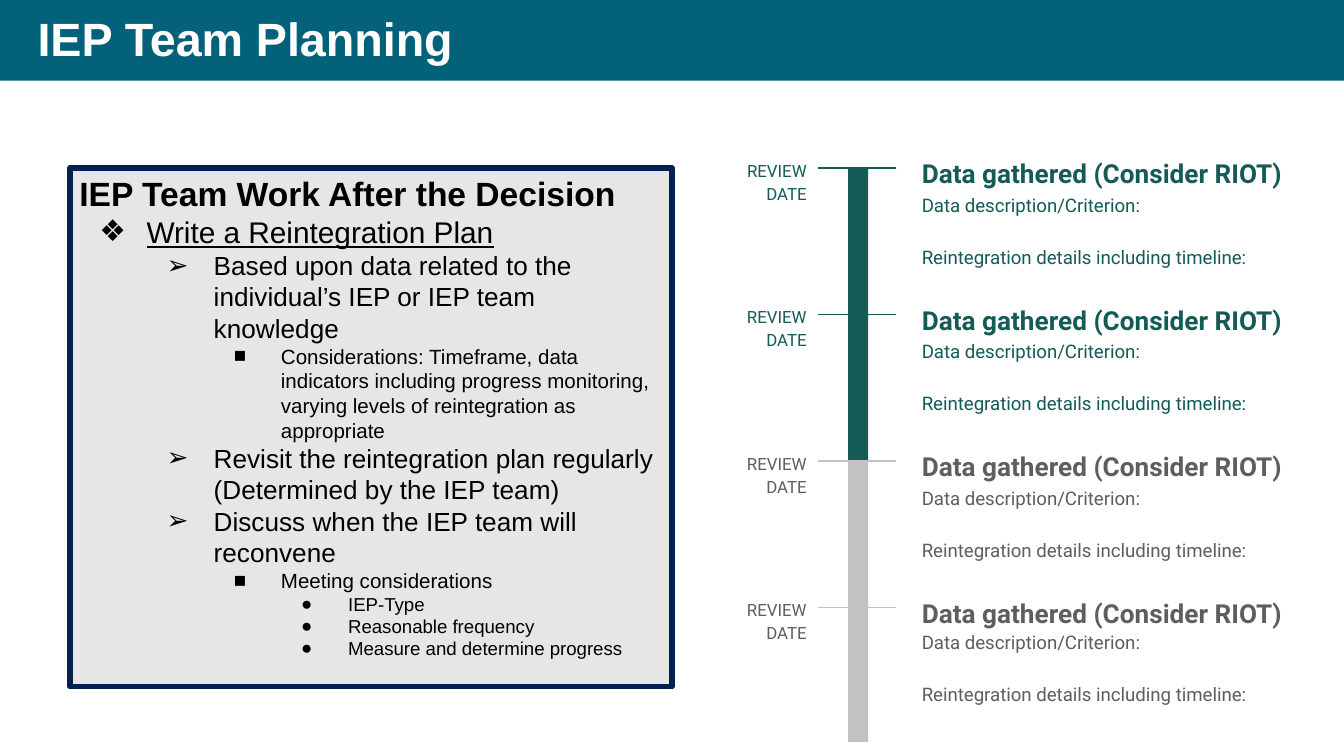
from lxml import etree
from pptx import Presentation
from pptx.dml.color import RGBColor
from pptx.enum import shapes, text
from pptx.oxml import ns
from pptx.util import Inches, Pt

TEAL, GREEN, SILVER, GREY = "03617A", "155B55", "C2C2C2", "5E5E5E"
NAVY, PALE, BLACK, WHITE = "002152", "E6E6E6", "000000", "FFFFFF"

# Bullet and text size for each outline level; level 0 is the heading
LEVELS = [(None, 18), ("❖", 16), ("➢", 14), ("■", 11), ("●", 10)]
OUTLINE = [
    (0, "IEP Team Work After the Decision"),
    (1, "Write a Reintegration Plan"),
    (2, "Based upon data related to the individual’s IEP or IEP team knowledge"),
    (3, "Considerations: Timeframe, data indicators including progress "
        "monitoring, varying levels of reintegration as appropriate"),
    (2, "Revisit the reintegration plan regularly (Determined by the IEP team)"),
    (2, "Discuss when the IEP team will reconvene"),
    (3, "Meeting considerations"),
    (4, "IEP-Type"),
    (4, "Reasonable frequency"),
    (4, "Measure and determine progress"),
]

# Timeline steps: bar colour, text colour, label, bar height, details offset
STEPS = [
    (GREEN, GREEN, ["REVIEW DATE"], 1.09, 0.09),
    (GREEN, GREEN, ["REVIEW", "DATE"], 1.09, 0.09),
    (SILVER, GREY, ["REVIEW", "DATE"], 1.09, 0.09),
    (SILVER, GREY, ["REVIEW", "DATE"], 1, 0.07),
]
TIMELINE_TOP, STEP = 1.25, 1.09


def rgb(value):
    return RGBColor.from_string(value)


def add_rect(parent, left, top, width, height, fill, line=None):
    sp = parent.add_shape(shapes.MSO_SHAPE.RECTANGLE, Inches(left),
                          Inches(top), Inches(width), Inches(height))
    sp.shadow.inherit = False
    sp.fill.solid()
    sp.fill.fore_color.rgb = rgb(fill)
    if line:
        sp.line.color.rgb = rgb(line)
        sp.line.width = Pt(3)
    else:
        sp.line.fill.background()
    return sp


def add_rule(parent, left, right, y, color):
    cx = parent.add_connector(shapes.MSO_CONNECTOR.STRAIGHT, Inches(right),
                              Inches(y), Inches(left), Inches(y))
    cx.line.color.rgb = rgb(color)
    cx.line.width = Pt(0.75)
    etree.SubElement(cx._element.spPr, ns.qn("a:effectLst"))


def set_insets(tf, x, y):
    tf.word_wrap = True
    tf.margin_left = tf.margin_right = Inches(x)
    tf.margin_top = tf.margin_bottom = Inches(y)


def style(p, size, font, color, bold=False):
    for r in p.runs:
        r.font.size, r.font.name, r.font.bold = Pt(size), font, bold
        r.font.color.rgb = rgb(color)


def add_text(parent, left, top, width, height, lines, size, color,
             font="Roboto", bold=False, inset=(0.1, 0.1), spacing=None,
             align=None):
    box = parent.add_textbox(Inches(left), Inches(top),
                             Inches(width), Inches(height))
    tf = box.text_frame
    set_insets(tf, *inset)
    tf.text = "\n".join(lines)
    for p in tf.paragraphs:
        p.line_spacing, p.alignment = spacing, align
        style(p, size, font, color, bold)
    return tf


def add_bullet(p, char, indent):
    pPr = p._p.get_or_add_pPr()
    pPr.set("marL", str(Inches(indent)))
    pPr.set("indent", str(Inches(-0.35)))
    color = etree.SubElement(pPr, ns.qn("a:buClr"))
    etree.SubElement(color, ns.qn("a:srgbClr"), val=BLACK)
    etree.SubElement(pPr, ns.qn("a:buFont"), typeface="Arial")
    etree.SubElement(pPr, ns.qn("a:buChar"), char=char)


def add_outline(parent):
    tf = add_rect(parent, 0.52, 1.25, 4.48, 3.86, PALE, NAVY).text_frame
    set_insets(tf, 0.07, 0.04)
    tf.vertical_anchor = text.MSO_ANCHOR.TOP
    tf.text = "\n".join(words for _, words in OUTLINE)
    for p, (level, _) in zip(tf.paragraphs, OUTLINE):
        char, size = LEVELS[level]
        p.alignment = text.PP_ALIGN.LEFT
        p.line_spacing = 1.0
        style(p, size, "Arial", BLACK, bold=level == 0)
        if char:
            p.level = level - 1
            add_bullet(p, char, level * 0.5)
        if level == 1:
            p.runs[0].font.underline = True


def add_step(parent, top, bar, color, label, height, offset):
    group = parent.add_group_shape().shapes
    add_rect(group, 6.31, top, 0.15, height, bar)
    add_rule(group, 6.09, 6.67, top, bar)
    add_text(group, 6.76, top - 0.21, 2.98, 0.3,
             ["Data gathered (Consider RIOT)"], 14, color, bold=True,
             spacing=1.15)
    tf = add_text(group, 6.76, top + offset, 2.98, 0.45,
                  ["Data description/Criterion:",
                   "Reintegration details including timeline:"], 10, color)
    tf.paragraphs[1].space_before = Pt(16)
    add_text(group, 5.27, top - 0.18, 0.83, 0.38, label, 9, color,
             spacing=1.15, align=text.PP_ALIGN.RIGHT)


def main():
    # Widescreen 16:9 page
    prs = Presentation()
    prs.slide_width = Inches(10)
    prs.slide_height = Inches(10 * 9 / 16)
    slide = prs.slides.add_slide(prs.slide_layouts[6])

    # Title band
    add_rect(slide.shapes, 0, 0, 10, 0.6, TEAL)

    # Review timeline
    for i, step in enumerate(STEPS):
        add_step(slide.shapes, TIMELINE_TOP + i * STEP, *step)

    # Outline panel
    add_outline(slide.shapes)

    # Title
    tf = add_text(slide.shapes, 0.21, 0.08, 6.93, 0.45, ["IEP Team Planning"],
                  25, WHITE, font="Arial", bold=True, inset=(0.07, 0.04),
                  spacing=0.9)
    tf.vertical_anchor = text.MSO_ANCHOR.MIDDLE

    prs.save("out.pptx")


if __name__ == "__main__":
    main()
